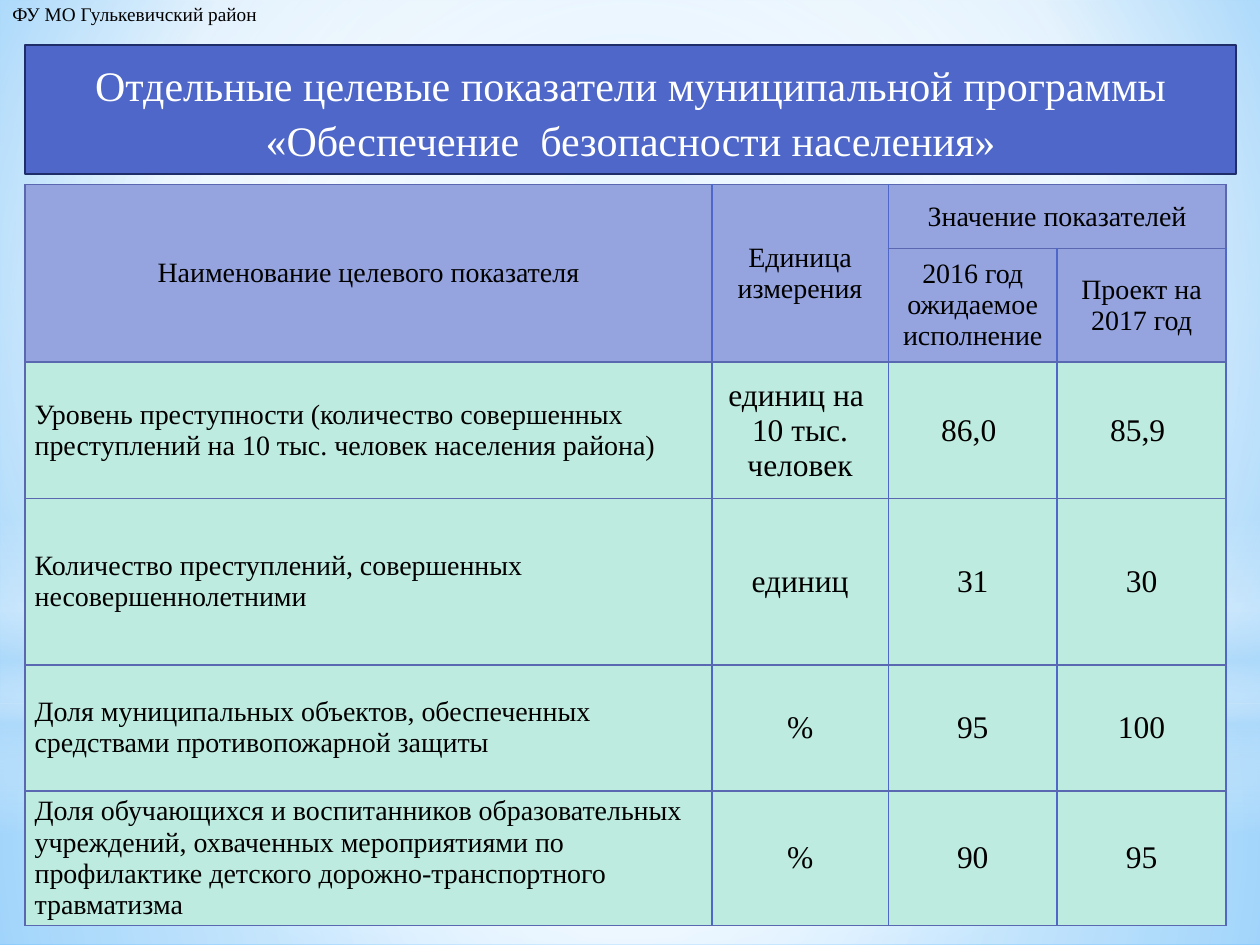
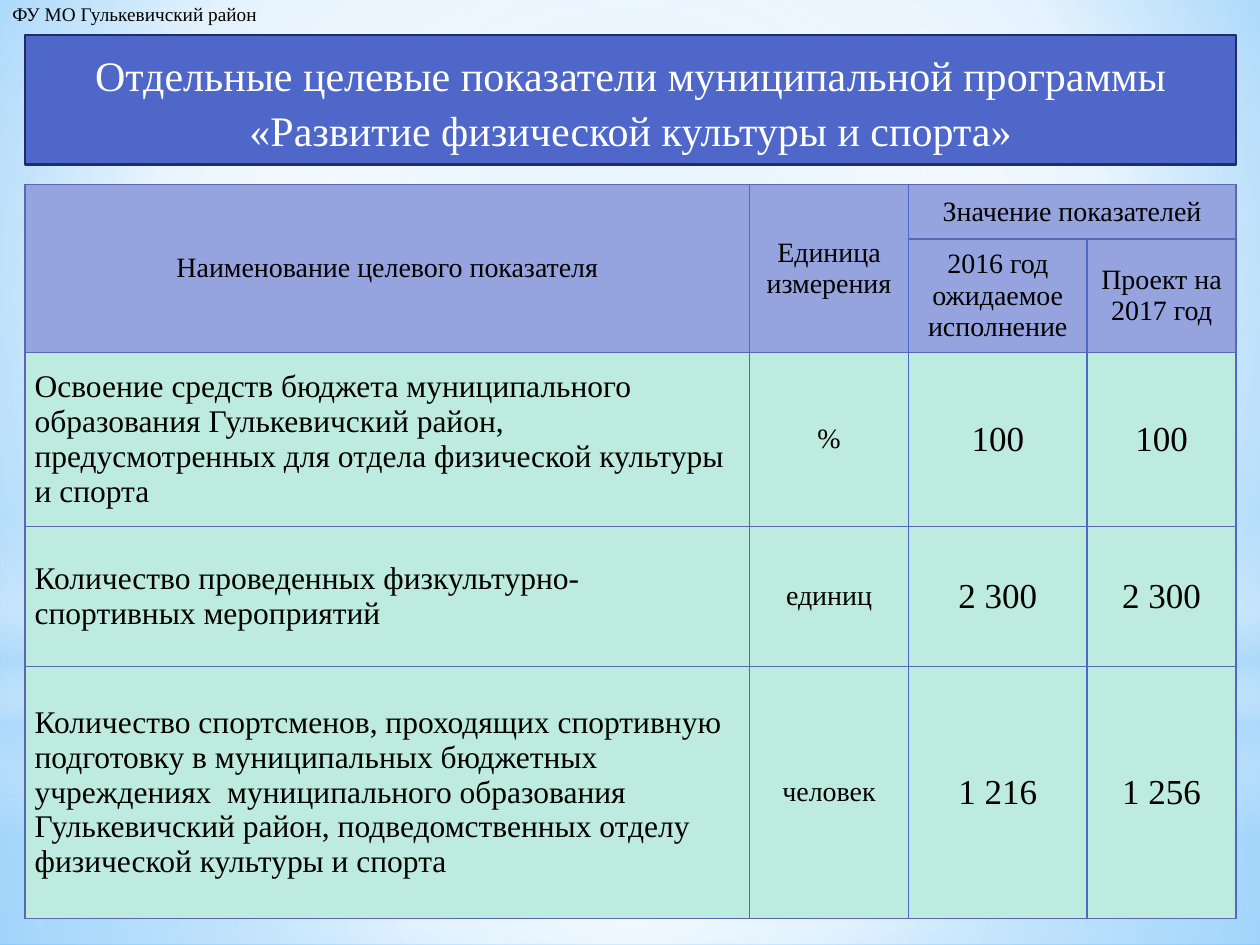
import pptx
import pptx.dml.color
import pptx.enum.shapes
import pptx.enum.text
import pptx.oxml
import pptx.oxml.ns
import pptx.util

Pt = pptx.util.Pt
qn = pptx.oxml.ns.qn
SHAPES = pptx.enum.shapes.MSO_SHAPE
ALIGN = pptx.enum.text.PP_ALIGN
MIDDLE = pptx.enum.text.MSO_ANCHOR.MIDDLE
NO_FIT = pptx.enum.text.MSO_AUTO_SIZE.NONE
CENTRE = (50, 50, 50, 50)


def color(hex_string):
    return pptx.dml.color.RGBColor.from_string(hex_string)


def assign(target, **values):
    for name, value in values.items():
        setattr(target, name, value)


def xml(text):
    """Build an element from markup whose root takes the drawing namespace."""
    return pptx.oxml.parse_xml(text.replace(">", f" {pptx.oxml.ns.nsdecls('a')}>", 1))


def gradient(stops, focus=None):
    """Stops are (position, colour, opacity) in percent; no focus means top to bottom."""
    stop_list = "".join(
        f'<a:gs pos="{pos * 1000}"><a:srgbClr val="{tone}">'
        f'<a:alpha val="{opacity * 1000}"/></a:srgbClr></a:gs>'
        for pos, tone, opacity in stops)
    if focus:
        sides = " ".join(f'{side}="{value * 1000}"' for side, value in zip("ltrb", focus))
        direction = f'<a:path path="circle"><a:fillToRect {sides}/></a:path>'
    else:
        direction = '<a:lin ang="5400000" scaled="0"/>'
    return xml(f'<a:gradFill rotWithShape="1"><a:gsLst>{stop_list}</a:gsLst>{direction}</a:gradFill>')


class Deck:
    font = "Times New Roman"
    left = 14.4
    ink, white = "000000", "FFFFFF"
    banner_fill, banner_line = "4E67C8", "1F2E69"
    inner_line, outer_line = "4E67C8", "5968B0"
    header_fill, body_fill = "95A4DE", "BEEBDF"

    def __init__(self):
        self.prs = pptx.Presentation()
        assign(self.prs, slide_width=Pt(720), slide_height=Pt(540))
        self.layout = self.prs.slide_layouts[5]
        self.slide = None

    def new_slide(self):
        self.slide = self.prs.slides.add_slide(self.layout)

    def set_text(self, frame, lines, size, tone, align=ALIGN.LEFT, spacing=None):
        frame.text = "\n".join(lines)
        for paragraph in frame.paragraphs:
            assign(paragraph, alignment=align, line_spacing=spacing)
            for run in paragraph.runs:
                assign(run.font, name=self.font, size=Pt(size), bold=False)
                run.font.color.rgb = color(tone)

    def background(self, stops, focus):
        self.layout.background.fill.solid()
        properties = self.layout.element.find(".//" + qn("p:bgPr"))
        properties.replace(properties[0], gradient(stops, focus))

    def glow(self, kind, top, height, stops, focus=None):
        """Draw a full-width translucent shape and move it to the layout."""
        shape = self.slide.shapes.add_shape(kind, 0, Pt(top), Pt(720), Pt(height))
        shape.shadow.inherit = False
        shape.line.fill.background()
        shape.fill.solid()
        properties = shape.element.spPr
        properties.replace(properties.find(qn("a:solidFill")), gradient(stops, focus))
        self.layout.shapes.element.append(shape.element)

    def owner(self, text):
        box = self.slide.shapes.add_textbox(0, Pt(-2), Pt(157), Pt(21))
        box.text_frame.word_wrap = False
        self.set_text(box.text_frame, [text], 11, self.ink)

    def banner(self, text, top):
        title = self.slide.shapes.title
        assign(title, left=Pt(self.left), top=Pt(top), width=Pt(692), height=Pt(73.8))
        title.element.spPr.append(xml('<a:prstGeom prst="roundRect"><a:avLst/></a:prstGeom>'))
        title.fill.solid()
        title.fill.fore_color.rgb = color(self.banner_fill)
        title.line.color.rgb = color(self.banner_line)
        title.line.width = Pt(1.25)
        assign(title.text_frame, word_wrap=True, auto_size=NO_FIT, vertical_anchor=MIDDLE)
        self.set_text(title.text_frame, [text], 24, self.white, ALIGN.CENTER, 1.1)

    def border(self, cell, row, column):
        outer_right = row == 0 and column >= 2
        tones = {"L": self.inner_line if column else self.outer_line,
                 "R": self.outer_line if outer_right else self.inner_line,
                 "T": self.outer_line, "B": self.outer_line}
        properties = cell._tc.get_or_add_tcPr()
        for side, tone in tones.items():
            properties.append(xml(
                f'<a:ln{side} w="12700"><a:solidFill><a:srgbClr val="{tone}"/>'
                f'</a:solidFill></a:ln{side}>'))

    def indicators(self, rows, widths, heights, sizes):
        """Sizes are the body text sizes, one for each column."""
        rows = HEADER + rows
        table = self.slide.shapes.add_table(
            len(rows), len(widths), Pt(self.left), Pt(105.5),
            Pt(sum(widths)), Pt(sum(heights))).table
        assign(table, first_row=False, horz_banding=False)
        for column, width in zip(table.columns, widths):
            column.width = Pt(width)
        for line, height in zip(table.rows, heights):
            line.height = Pt(height)

        for r, texts in enumerate(rows):
            heading = r < len(HEADER)
            for c, text in enumerate(texts):
                cell = table.cell(r, c)
                self.border(cell, r, c)
                cell.fill.solid()
                cell.fill.fore_color.rgb = color(self.header_fill if heading else self.body_fill)
                cell.vertical_anchor = MIDDLE
                if not heading:
                    assign(cell, margin_left=Pt(5.4), margin_right=Pt(5.4),
                           margin_top=0, margin_bottom=0)
                if text:
                    align = ALIGN.CENTER if heading or c else ALIGN.LEFT
                    self.set_text(cell.text_frame, text.split("\n"),
                                  16 if heading else sizes[c], self.ink, align)

        # Header spans
        for first, last in (((0, 0), (1, 0)), ((0, 1), (1, 1)), ((0, 2), (0, 3))):
            table.cell(*first).merge(table.cell(*last))


HEADER = [
    ("Наименование целевого показателя", "Единица\nизмерения", "Значение показателей", ""),
    ("", "", "2016 год ожидаемое исполнение", "Проект на 2017 год"),
]

PROGRAMMES = [
    dict(
        name="«Обеспечение  безопасности населения»", top=25.8,
        widths=(392.4, 100.8, 96.5, 96.5), heights=(36.5, 65, 78, 95, 72, 76.5),
        sizes=(16, 18, 18, 18),
        rows=[
            ("Уровень преступности (количество совершенных преступлений на 10 тыс. человек "
             "населения района)", "единиц на \n10 тыс.\nчеловек", "86,0 ", "85,9 "),
            ("Количество преступлений, совершенных несовершеннолетними", "единиц", "31", "30"),
            ("Доля муниципальных объектов, обеспеченных средствами противопожарной защиты",
             "%", "95", "100"),
            ("Доля обучающихся и воспитанников образовательных учреждений, охваченных "
             "мероприятиями по профилактике детского дорожно-транспортного травматизма",
             "%", "90", "95"),
        ]),
    dict(
        name="«Развитие физической культуры и спорта»", top=20.2,
        widths=(414, 90.7, 102.2, 85), heights=(31, 64.5, 99.5, 80, 144),
        sizes=(18, 16, 20, 20),
        rows=[
            ("Освоение средств бюджета муниципального образования Гулькевичский район, "
             "предусмотренных для отдела физической культуры и спорта", "%", "100", "100"),
            ("Количество проведенных физкультурно-спортивных мероприятий",
             "единиц", "2 300", "2 300"),
            ("Количество спортсменов, проходящих спортивную подготовку в муниципальных "
             "бюджетных учреждениях  муниципального образования Гулькевичский район, "
             "подведомственных отделу физической культуры и спорта",
             "человек", "1 216", "1 256"),
        ]),
]


def add_backdrop(deck):
    white, sky = "FFFFFF", "B4DCFA"
    deck.background([(0, "9ED5FF", 100), (60, white, 100), (100, "5BB9FF", 100)],
                    (20, 10, 20, 60))
    deck.glow(SHAPES.RECTANGLE, 402, 138,
              [(0, white, 91), (37, white, 76), (100, sky, 79)], CENTRE)
    deck.glow(SHAPES.RECTANGLE, 0, 402,
              [(0, white, 89), (48, white, 62), (100, sky, 79)], CENTRE)
    deck.glow(SHAPES.RECTANGLE, 296.5, 180,
              [(0, white, 0), (29, white, 30), (45, sky, 40),
               (55, white, 26), (65, sky, 60), (100, white, 0)])
    deck.glow(SHAPES.OVAL, 126, 402, [(0, white, 100), (56, white, 0)], CENTRE)


def main():
    deck = Deck()
    for number, programme in enumerate(PROGRAMMES):
        deck.new_slide()
        if number == 0:
            add_backdrop(deck)
        deck.owner("ФУ МО Гулькевичский район")
        deck.banner("Отдельные целевые показатели муниципальной программы " + programme["name"],
                    programme["top"])
        deck.indicators(programme["rows"], programme["widths"],
                        programme["heights"], programme["sizes"])
    deck.prs.save("out.pptx")


if __name__ == "__main__":
    main()
